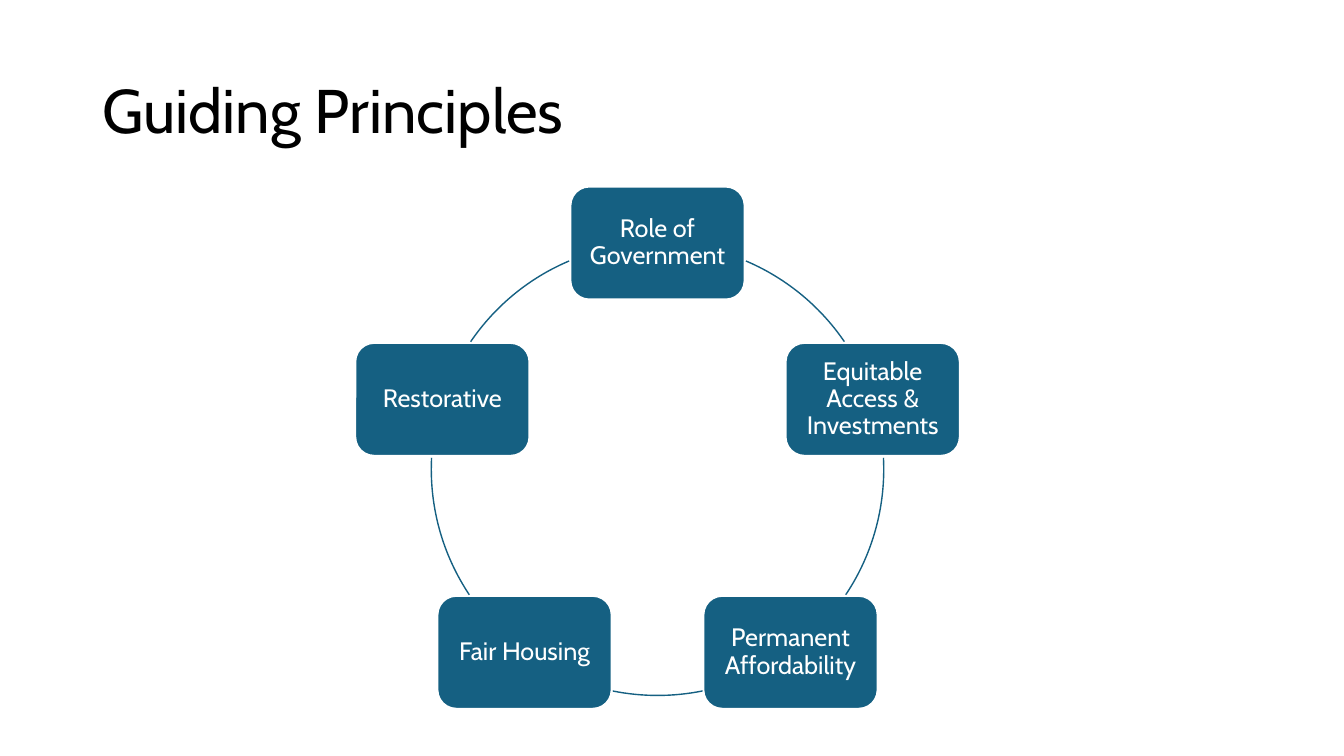
from math import cos, radians, sin

from pptx import Presentation
from pptx import util as u
from pptx.dml.color import RGBColor
from pptx.enum import shapes, text

COLORS = {"ink": "000000", "paper": "FFFFFF", "teal": "156082"}
FONT = "Cabin"
PRINCIPLES = [
    "Role of Government",
    "Equitable Access & Investments",
    "Permanent Affordability",
    "Fair Housing",
    "Restorative",
]
ARC_ANGLES = [(293, 325.7), (357.1, 33.7), (78.5, 101.5), (146.3, 182.9), (214.3, 247)]
CARD_WIDTH, CARD_HEIGHT = 124.5, 80.7


def color(name):
    return RGBColor.from_string(COLORS[name])


def apply(target, values):
    for name, value in values.items():
        setattr(target, name, value)


def write(shape, words, size, ink, align, inset):
    frame = shape.text_frame
    apply(frame, {
        "word_wrap": True,
        "vertical_anchor": text.MSO_ANCHOR.MIDDLE,
        "margin_left": u.Pt(inset[0]),
        "margin_right": u.Pt(inset[0]),
        "margin_top": u.Pt(inset[1]),
        "margin_bottom": u.Pt(inset[1]),
    })
    para = frame.paragraphs[0]
    apply(para, {"alignment": align, "line_spacing": 0.9})
    span = para.add_run()
    span.text = words
    apply(span.font, {"name": FONT, "size": u.Pt(size)})
    span.font.color.rgb = color(ink)


def add_shape(page, kind, box, line, width):
    shape = page.shapes.add_shape(kind, *map(u.Pt, box))
    shape.shadow.inherit = False
    shape.line.color.rgb = color(line)
    shape.line.width = u.Pt(width)
    return shape


def add_title(page, box, words):
    title = page.shapes.add_textbox(*map(u.Pt, box))
    write(title, words, 44, "ink", text.PP_ALIGN.LEFT, (7.2, 3.6))


def add_card(page, box, words):
    card = add_shape(page, shapes.MSO_SHAPE.ROUNDED_RECTANGLE, box, "paper", 1.5)
    card.fill.solid()
    card.fill.fore_color.rgb = color("teal")
    write(card, words, 18, "paper", text.PP_ALIGN.CENTER, (5, 5))


def add_arc(page, box, angles):
    arc = add_shape(page, shapes.MSO_SHAPE.ARC, box, "teal", 1)
    arc.fill.background()
    for index, angle in enumerate(angles):
        arc.adjustments[index] = angle * 0.6


def add_cycle(page, box, principles):
    left, top, size, _ = box
    radius = size / 2
    for index, (words, angles) in enumerate(zip(principles, ARC_ANGLES)):
        turn = radians(360 / len(principles) * index - 90)
        center_x = left + radius + radius * cos(turn)
        center_y = top + radius + radius * sin(turn)
        card = (center_x - CARD_WIDTH / 2, center_y - CARD_HEIGHT / 2,
                CARD_WIDTH, CARD_HEIGHT)
        add_card(page, card, words)
        add_arc(page, box, angles)


def main():
    deck = Presentation()
    apply(deck, {"slide_width": u.Pt(960), "slide_height": u.Pt(540)})
    page = deck.slides.add_slide(deck.slide_layouts[6])
    add_title(page, (66, 28.8, 828, 104.4), "Guiding Principles")
    add_cycle(page, (308.1, 173.6, 323.2, 323.2), PRINCIPLES)
    deck.save("out.pptx")


if __name__ == "__main__":
    main()
